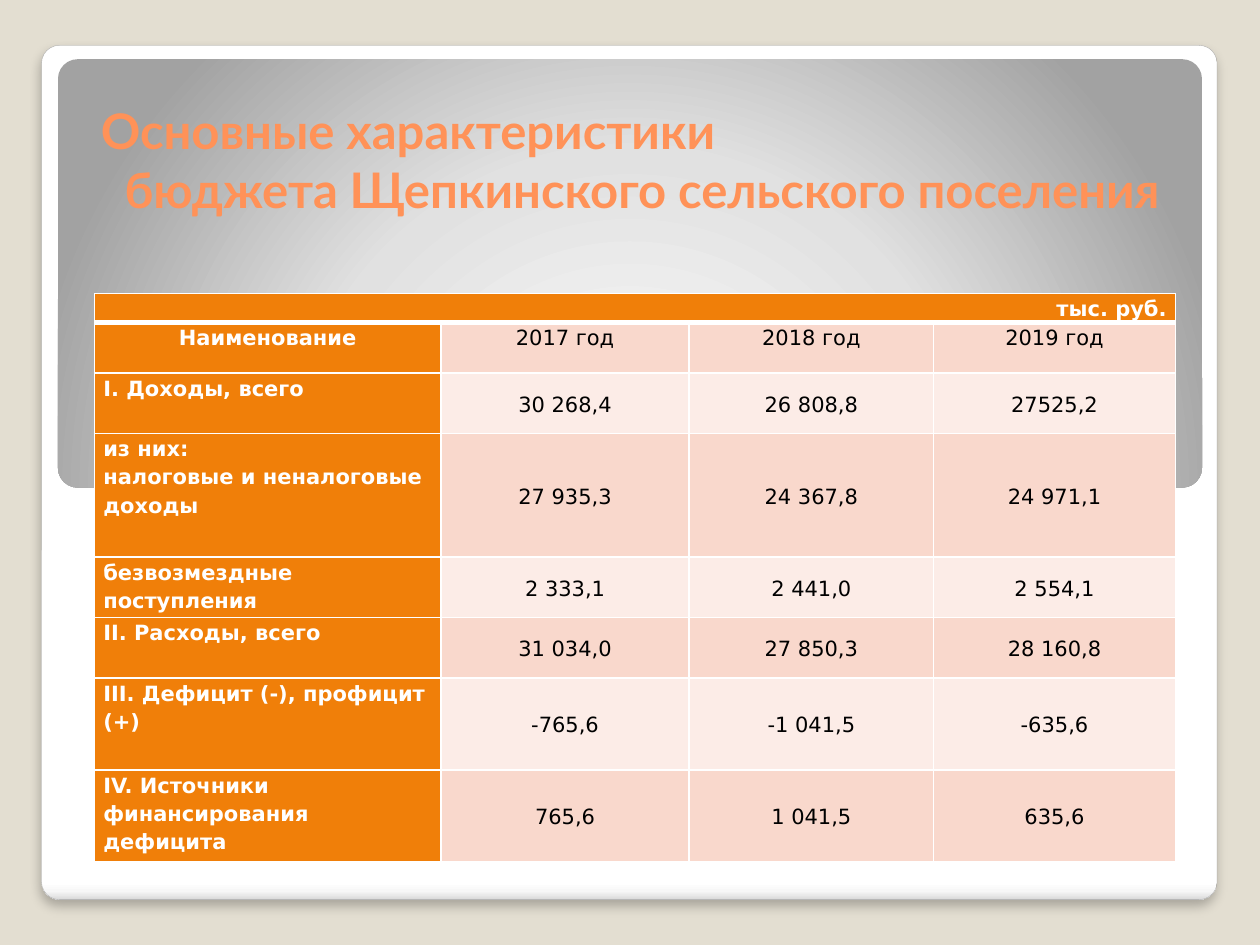
from pptx import Presentation
from pptx.dml.color import RGBColor
from pptx.enum.shapes import MSO_SHAPE
from pptx.enum.text import MSO_ANCHOR, PP_ALIGN
from pptx.oxml import parse_xml
from pptx.oxml.ns import nsdecls
from pptx.util import Inches, Pt

ORANGE, WHITE, BLACK = "F07F09", "FFFFFF", "000000"
BANDS = ["F9D8CC", "FCECE7"]


def color(value):
    return RGBColor.from_string(value)


def add_panel(left, top, width, height, radius, stops, direction):
    """Add a rounded panel; stops are (percent, colour), direction is gradient XML."""
    panel = slide.shapes.add_shape(MSO_SHAPE.ROUNDED_RECTANGLE, Inches(left),
                                   Inches(top), Inches(width), Inches(height))
    panel.adjustments[0] = radius
    panel.shadow.inherit = False
    panel.line.fill.background()
    stop_xml = "".join(f'<a:gs pos="{percent * 1000}"><a:srgbClr val="{value}"/></a:gs>'
                       for percent, value in stops)
    panel.fill.background()
    properties = panel._element.spPr
    no_fill = properties.find("{*}noFill")
    properties.replace(no_fill, parse_xml(
        f'<a:gradFill {nsdecls("a")} rotWithShape="1"><a:gsLst>{stop_xml}</a:gsLst>'
        f'{direction}</a:gradFill>'))
    return panel


presentation = Presentation()
presentation.slide_width, presentation.slide_height = Inches(10), Inches(7.5)
slide = presentation.slides.add_slide(presentation.slide_layouts[6])
slide.background.fill.solid()
slide.background.fill.fore_color.rgb = color("E3DED1")

# Backdrop
card = add_panel(0.33, 0.36, 9.33, 6.78, 0.021,
                 [(0, WHITE), (98, WHITE), (99, "F7F7F7"), (100, "DADADA")],
                 '<a:lin ang="5400000" scaled="0"/>')
card.line.color.rgb = color("A4A4A4")
card.line.width = Pt(0.16)
card._element.spPr.find("{*}effectLst").append(parse_xml(
    f'<a:outerShdw {nsdecls("a")} blurRad="{Pt(6)}" dist="{Pt(4)}" dir="5400000" '
    'algn="t" rotWithShape="0"><a:srgbClr val="000000"><a:alpha val="25000"/>'
    '</a:srgbClr></a:outerShdw>'))
add_panel(0.46, 0.47, 9.08, 3.4, 0.046,
          [(0, WHITE), (55, "E1E1E1"), (100, "A2A2A2")],
          '<a:path path="circle"><a:fillToRect l="50000" t="175000" r="50000" '
          'b="-75000"/></a:path>')

# Title
title = slide.shapes.add_textbox(Inches(0.75), Inches(0.76), Inches(8.5), Inches(1.02))
frame = title.text_frame
frame.word_wrap = True
frame.vertical_anchor = MSO_ANCHOR.BOTTOM
frame.margin_left = frame.margin_right = Inches(0.05)
frame.margin_top = frame.margin_bottom = Inches(0.05)
frame.text = "Основные характеристики\nбюджета Щепкинского сельского поселения"
for paragraph, alignment in zip(frame.paragraphs, [PP_ALIGN.LEFT, PP_ALIGN.RIGHT]):
    paragraph.alignment = alignment
    paragraph.font.name = "Lato"
    paragraph.font.size = Pt(28)
    paragraph.font.bold = True
    paragraph.font.color.rgb = color("FF9258")

# Budget table
rows = [
    ["тыс. руб.", "", "", ""],
    ["Наименование", "2017 год", "2018 год", "2019 год"],
    ["I. Доходы, всего", "30 268,4", "26 808,8", "27525,2"],
    ["из них:\nналоговые и неналоговые доходы", "27 935,3", "24 367,8", "24 971,1"],
    ["безвозмездные поступления", "2 333,1", "2 441,0", "2 554,1"],
    ["II. Расходы, всего", "31 034,0", "27 850,3", "28 160,8"],
    ["III. Дефицит (-), профицит (+)", "-765,6", "-1 041,5", "-635,6"],
    ["IV. Источники финансирования дефицита", "765,6", "1 041,5", "635,6"],
]
column_widths = [2.75, 1.97, 1.94, 1.92]
row_heights = [0.23, 0.4, 0.48, 0.98, 0.48, 0.48, 0.73, 0.73]
table = slide.shapes.add_table(len(rows), len(column_widths), Inches(0.75), Inches(2.33),
                               Inches(8.58), Inches(4.5)).table
table.first_row = table.horz_banding = False
for column, width in zip(table.columns, column_widths):
    column.width = Inches(width)
for row, height in zip(table.rows, row_heights):
    row.height = Inches(height)
table.cell(0, 0).merge(table.cell(0, 3))

for r, texts in enumerate(rows):
    for c, text in enumerate(texts):
        cell = table.cell(r, c)
        is_heading = r == 0 or c == 0
        cell.fill.solid()
        cell.fill.fore_color.rgb = color(ORANGE if is_heading else BANDS[(r - 1) % 2])
        cell.margin_left = cell.margin_right = Inches(0.07)
        cell.margin_top = cell.margin_bottom = 0
        cell.vertical_anchor = MSO_ANCHOR.MIDDLE if r > 1 and c > 0 else MSO_ANCHOR.TOP
        cell.text = text
        for paragraph in cell.text_frame.paragraphs:
            if r == 0:
                paragraph.alignment = PP_ALIGN.RIGHT
            elif r == 1 or c > 0:
                paragraph.alignment = PP_ALIGN.CENTER
            else:
                paragraph.alignment = PP_ALIGN.LEFT
            paragraph.line_spacing = 1.15
            paragraph.font.name = "DejaVu Sans"
            paragraph.font.size = Pt(12)
            paragraph.font.bold = is_heading
            paragraph.font.color.rgb = color(WHITE if is_heading else BLACK)
        for position, side in enumerate("LRTB"):
            under_header = (r, side) in [(0, "B"), (1, "T")]
            cell._tc.tcPr.insert(position, parse_xml(
                f'<a:ln{side} {nsdecls("a")} w="{Pt(3 if under_header else 1)}">'
                f'<a:solidFill><a:srgbClr val="{WHITE}"/></a:solidFill></a:ln{side}>'))

presentation.save("out.pptx")
